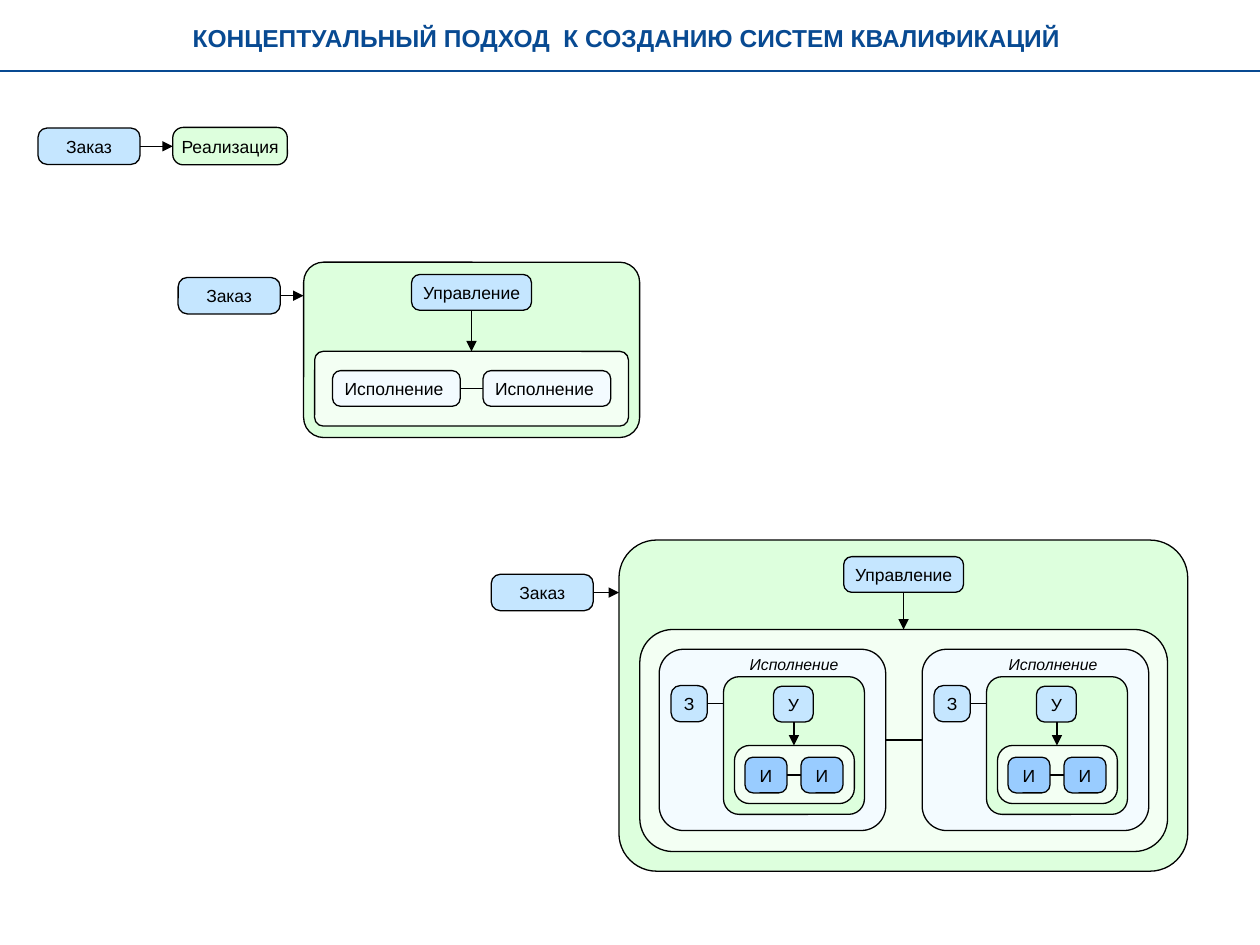
import pptx
import pptx.dml.color
import pptx.enum.shapes
import pptx.enum.text
import pptx.oxml.ns
import pptx.util
from lxml import etree

Pt = pptx.util.Pt
COLORS = {
    "title": "084A92",
    "black": "000000",
    "order": "C5E6FF",
    "green": "DDFFDD",
    "pale_green": "F3FFF3",
    "pale_blue": "F3FBFF",
    "worker": "99CCFF",
}


def rgb(name):
    return pptx.dml.color.RGBColor.from_string(COLORS[name])


class Diagram:
    """Holds the style and the current slide."""

    font = "Arial"
    line_width = 0.75
    inset = 2.9

    def __init__(self, slide):
        self.shapes = slide.shapes

    def text(self, shape, text, size=10, color="black", bold=False, italic=False):
        frame = shape.text_frame
        frame.word_wrap = True
        frame.vertical_anchor = pptx.enum.text.MSO_ANCHOR.MIDDLE
        frame.margin_left = frame.margin_right = Pt(self.inset)
        frame.margin_top = frame.margin_bottom = Pt(self.inset)
        frame.text = text
        para = frame.paragraphs[0]
        para.alignment = pptx.enum.text.PP_ALIGN.CENTER
        font = para.runs[0].font
        font.name, font.size = self.font, Pt(size)
        font.bold, font.italic = bold, italic
        font.color.rgb = rgb(color)

    def label(self, left, top, width, height, text, **style):
        box = self.shapes.add_textbox(Pt(left), Pt(top), Pt(width), Pt(height))
        self.text(box, text, **style)

    def box(self, left, top, width, height, fill, rounding, text=None):
        box = self.shapes.add_shape(
            pptx.enum.shapes.MSO_SHAPE.ROUNDED_RECTANGLE,
            Pt(left), Pt(top), Pt(width), Pt(height))
        box.adjustments[0] = rounding
        box.shadow.inherit = False
        box.fill.solid()
        box.fill.fore_color.rgb = rgb(fill)
        box.line.color.rgb = rgb("black")
        box.line.width = Pt(self.line_width)
        if text:
            self.text(box, text)

    def line(self, x1, y1, x2, y2, arrow=False, color="black", width=line_width):
        line = self.shapes.add_connector(
            pptx.enum.shapes.MSO_CONNECTOR.STRAIGHT, Pt(x1), Pt(y1), Pt(x2), Pt(y2))
        line.line.color.rgb = rgb(color)
        line.line.width = Pt(width)
        qn = pptx.oxml.ns.qn
        if arrow:
            etree.SubElement(line.line._get_or_add_ln(), qn("a:tailEnd"), type="triangle")
        etree.SubElement(line._element.spPr, qn("a:effectLst"))

    def order(self, left, top, target):
        """Order box with an arrow to the left edge of its target."""
        width, height = 58.3, 20.8
        self.box(left, top, width, height, "order", 0.252, "Заказ")
        middle = top + height / 2
        self.line(left + width, middle, target, middle, arrow=True)

    def management(self, left, top, target):
        """Management box with an arrow down to its target."""
        width, height = 68.5, 20.4
        self.box(left, top, width, height, "order", 0.227, "Управление")
        center = left + width / 2
        self.line(center, top + height, center, target, arrow=True)

    def pair(self, left, top, width, step, fill, text):
        """Two equal boxes joined by a line."""
        height = 20.4
        for x in (left, left + step):
            self.box(x, top, width, height, fill, 0.227, text)
        middle = top + height / 2
        self.line(left + width, middle, left + step, middle)

    def unit(self, left, top, label_left):
        """Execution unit that repeats the whole scheme inside itself."""
        self.box(left, top, 129.5, 103.6, "pale_blue", 0.135)
        self.box(left + 36.7, top + 15.7, 80.6, 78.7, "green", 0.114)
        self.box(left + 43, top + 55, 68.5, 33.2, "pale_green", 0.261)
        self.box(left + 6.8, top + 20.8, 20.7, 20.7, "order", 0.252, "З")
        self.line(left + 27.5, top + 31, left + 36.7, top + 31)
        self.box(left + 65.3, top + 21.2, 22.7, 20.4, "order", 0.227, "У")
        self.line(left + 77, top + 41.6, left + 77, top + 55, arrow=True)
        self.pair(left + 49, top + 61.7, 24, 32, "worker", "И")
        self.label(label_left, top, 73.4, 16.6, "Исполнение", size=9, italic=True)


def main():
    deck = pptx.Presentation()
    deck.slide_width, deck.slide_height = Pt(720), Pt(540)
    page = Diagram(deck.slides.add_slide(deck.slide_layouts[6]))

    # Title and rule
    page.label(0, 9.4, 720, 24.5, "КОНЦЕПТУАЛЬНЫЙ ПОДХОД  К СОЗДАНИЮ СИСТЕМ КВАЛИФИКАЦИЙ ",
               size=14, color="title", bold=True)
    page.line(0, 40.5, 720, 40.5, color="title", width=1)

    # Level 1: order and delivery
    page.order(21.7, 73.2, 98.7)
    page.box(98.7, 72.8, 65.5, 21.4, "green", 0.281, "Реализация")

    # Level 2: delivery splits into management and execution
    page.box(173.5, 149.8, 192, 100.2, "green", 0.114)
    page.box(179.8, 200.8, 179.3, 42.7, "pale_green", 0.114)
    page.order(101.8, 158.6, 173.5)
    page.management(235.2, 156.9, 200.8)
    page.pair(190, 211.8, 73, 86, "pale_blue", "Исполнение ")

    # Level 3: each execution repeats the scheme
    page.box(353.7, 308.6, 325, 189.2, "green", 0.114)
    page.box(365.6, 359.7, 301.6, 126.9, "pale_green", 0.149)
    page.order(280.7, 328.2, 353.7)
    page.management(482.1, 318.1, 359.7)
    page.unit(376.7, 371, label_left=417)
    page.unit(527, 371, label_left=565)
    page.line(506.2, 422.8, 527, 422.8)

    deck.save("out.pptx")


if __name__ == "__main__":
    main()
